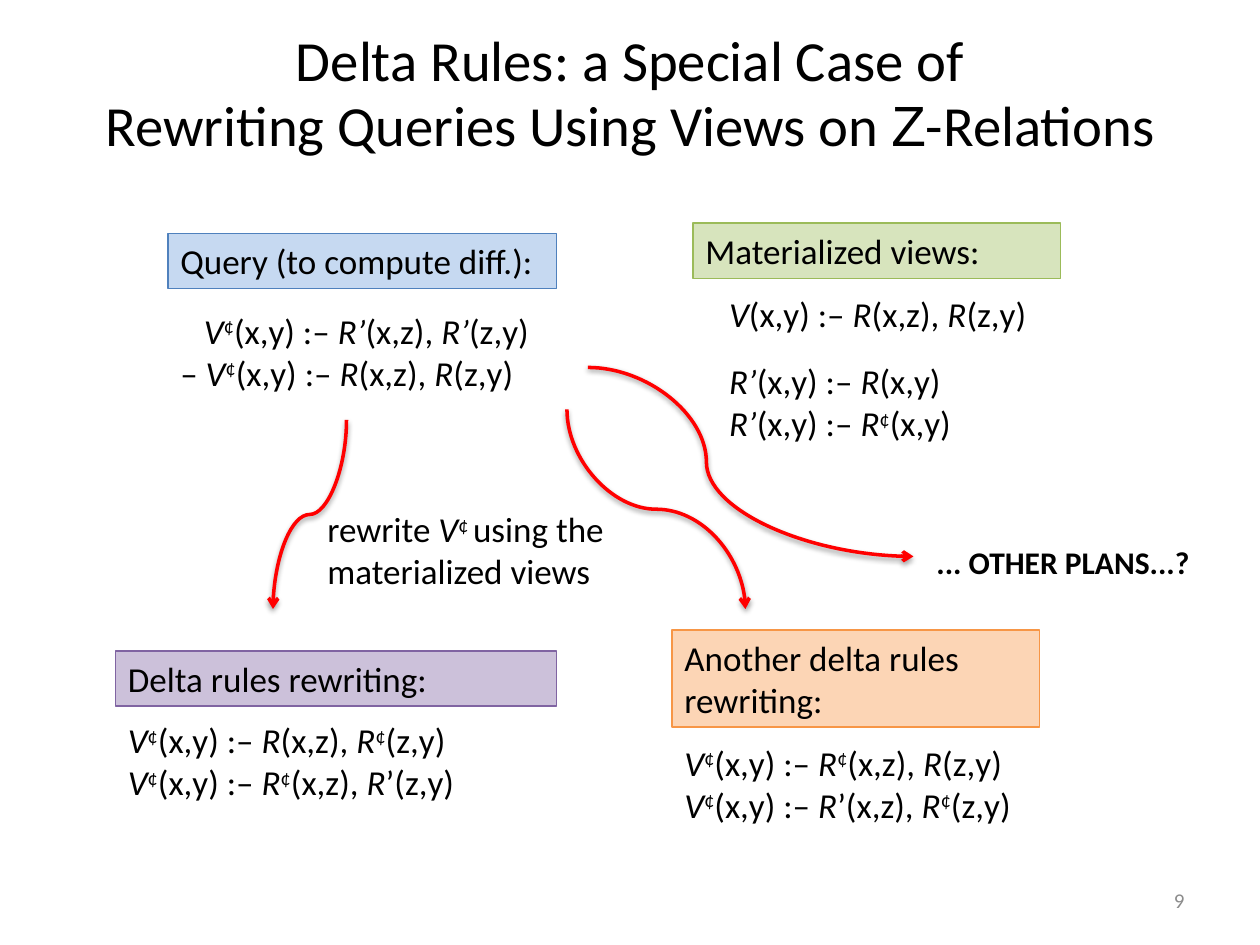
"""Build the slide on delta rules as query rewriting with views."""
from lxml import etree
from pptx import Presentation
from pptx import util as u
from pptx.dml.color import RGBColor
from pptx.enum import shapes, text
from pptx.oxml import parse_xml
from pptx.oxml.ns import nsdecls, qn

PX = 9525
LEFT, MID, RIGHT = text.PP_ALIGN.LEFT, text.PP_ALIGN.CENTER, text.PP_ALIGN.RIGHT

# Runs are parted by "|"; "/" marks italics, "@" Arial, "¢" is raised.
TITLE = ["Delta Rules: a Special Case of",
         "Rewriting Queries Using Views on |@Z|-Relations"]
HEADS = [
    ((128, 178, 296, 42), "C6D9F1", "4F81BD", ["Query (to compute diff.):"]),
    ((528, 170, 280, 42), "D7E4BD", "9BBB59", ["Materialized views:"]),
    ((88, 496, 336, 42), "CCC1DA", "8064A2", ["Delta rules rewriting:"]),
    ((512, 480, 280, 74), "FCD5B5", "F79646", ["Another delta rules", "rewriting:"]),
]
RULES = [
    ((88, 543, 336, 74), ["/V|¢|(x,y) :– |/R|(x,z), |/R|¢|(z,y)",
                          "/V|¢|(x,y) :– |/R|¢|(x,z), |/R|’(z,y)"]),
    ((512, 560, 336, 74), ["/V|¢|(x,y) :– |/R|¢|(x,z), |/R|(z,y)",
                           "/V|¢|(x,y) :– |/R|’(x,z), |/R|¢|(z,y)"]),
    ((128, 231, 336, 74), ["/V|¢|(x,y) :– |/R’|(x,z), |/R’|(z,y)",
                           "–|/ V|¢|(x,y) :– |/R|(x,z), |/R|(z,y)"]),
    ((546, 218, 286, 126), ["/V|(x,y) :– |/R|(x,z), |/R|(z,y)",
                            "/R’|(x,y) :– |/R|(x,y)",
                            "/R’|(x,y) :– |/R|¢|(x,y)"]),
    ((240, 382, 240, 74), ["rewrite |/V|¢ |using the materialized views"]),
]
CURVES = [
    ((264, 320), (208, 464), True, 50),
    ((432, 312), (568, 464), True, 50),
    ((448, 280), (696, 424), False, 36.4),
]


def tint(code):
    return RGBColor.from_string(code)


def px(*nums):
    return [u.Emu(round(n * PX)) for n in nums]


def write(shape, lines, size=20, color="000000", align=LEFT, mid=False, bold=False):
    frame = shape.text_frame
    frame.word_wrap = True
    frame.vertical_anchor = text.MSO_ANCHOR.MIDDLE if mid else text.MSO_ANCHOR.TOP
    for i, line in enumerate(lines):
        para = frame.paragraphs[0] if i == 0 else frame.add_paragraph()
        para.alignment = align
        for part in line.split("|"):
            run = para.add_run()
            run.text = part.lstrip("/@")
            font = run.font
            font.name = "Arial" if part[0] == "@" else "Calibri"
            font.size, font.bold = u.Pt(size), bold
            font.italic = part[0] == "/"
            font.color.rgb = tint(color)
            if part[0] == "¢":
                font._element.set("baseline", "30000")
    return frame.paragraphs


def label(slide, box, lines, **style):
    return write(slide.shapes.add_textbox(*px(*box)), lines, **style)


def head(slide, box, fill, edge, lines):
    shape = slide.shapes.add_shape(shapes.MSO_SHAPE.RECTANGLE, *px(*box))
    shape.shadow.inherit = False
    shape.fill.solid()
    shape.fill.fore_color.rgb = tint(fill)
    shape.line.color.rgb = tint(edge)
    shape.line.width = u.Pt(0.75)
    write(shape, lines)


def curve(slide, start, end, down, bend):
    (x1, y1), (x2, y2) = start, end
    turn = 0
    if down:
        turn = 90 if x2 < x1 else 270
        cx, cy = (x1 + x2) / 2, (y1 + y2) / 2
        dx, dy = (y2 - y1) / 2, abs(x2 - x1) / 2
        if turn == 270:
            dx = -dx
        x1, y1, x2, y2 = cx - dx, cy - dy, cx + dx, cy + dy
    link = slide.shapes.add_connector(shapes.MSO_CONNECTOR.CURVE, *px(x1, y1, x2, y2))
    link.line.color.rgb = tint("FF0000")
    link.line.width = u.Pt(2)
    prop = link._element.spPr
    prop.find(qn("a:xfrm")).set("rot", str(turn * 60000))
    stops = prop.find(qn("a:prstGeom")).find(qn("a:avLst"))
    etree.SubElement(stops, qn("a:gd"), name="adj1", fmla=f"val {round(bend * 1000)}")
    etree.SubElement(prop.find(qn("a:ln")), qn("a:tailEnd"), type="arrow")
    prop.append(parse_xml(
        f'<a:effectLst {nsdecls("a")}><a:outerShdw blurRad="40000" dist="20000" '
        'dir="5400000" rotWithShape="0"><a:srgbClr val="000000">'
        '<a:alpha val="38000"/></a:srgbClr></a:outerShdw></a:effectLst>'))


def main():
    deck = Presentation()
    deck.slide_width, deck.slide_height = px(960, 720)
    slide = deck.slides.add_slide(deck.slide_layouts[6])
    for para in label(slide, (56, 40, 848, 64), TITLE, size=32.4, align=MID, mid=True):
        para.line_spacing = 0.95
    label(slide, (688, 667, 224, 38), ["9"], size=12, color="8C8C8C", align=RIGHT, mid=True)
    rules = [label(slide, *rule) for rule in RULES]
    rules[2][0]._p.get_or_add_pPr().set("marL", str(18 * PX))
    rules[3][1].space_before = u.Pt(14.6)
    for item in HEADS:
        head(slide, *item)
    for item in CURVES:
        curve(slide, *item)
    label(slide, (704, 409, 224, 38), ["... OTHER PLANS...?"], size=18, bold=True)
    deck.save("out.pptx")


if __name__ == "__main__":
    main()
